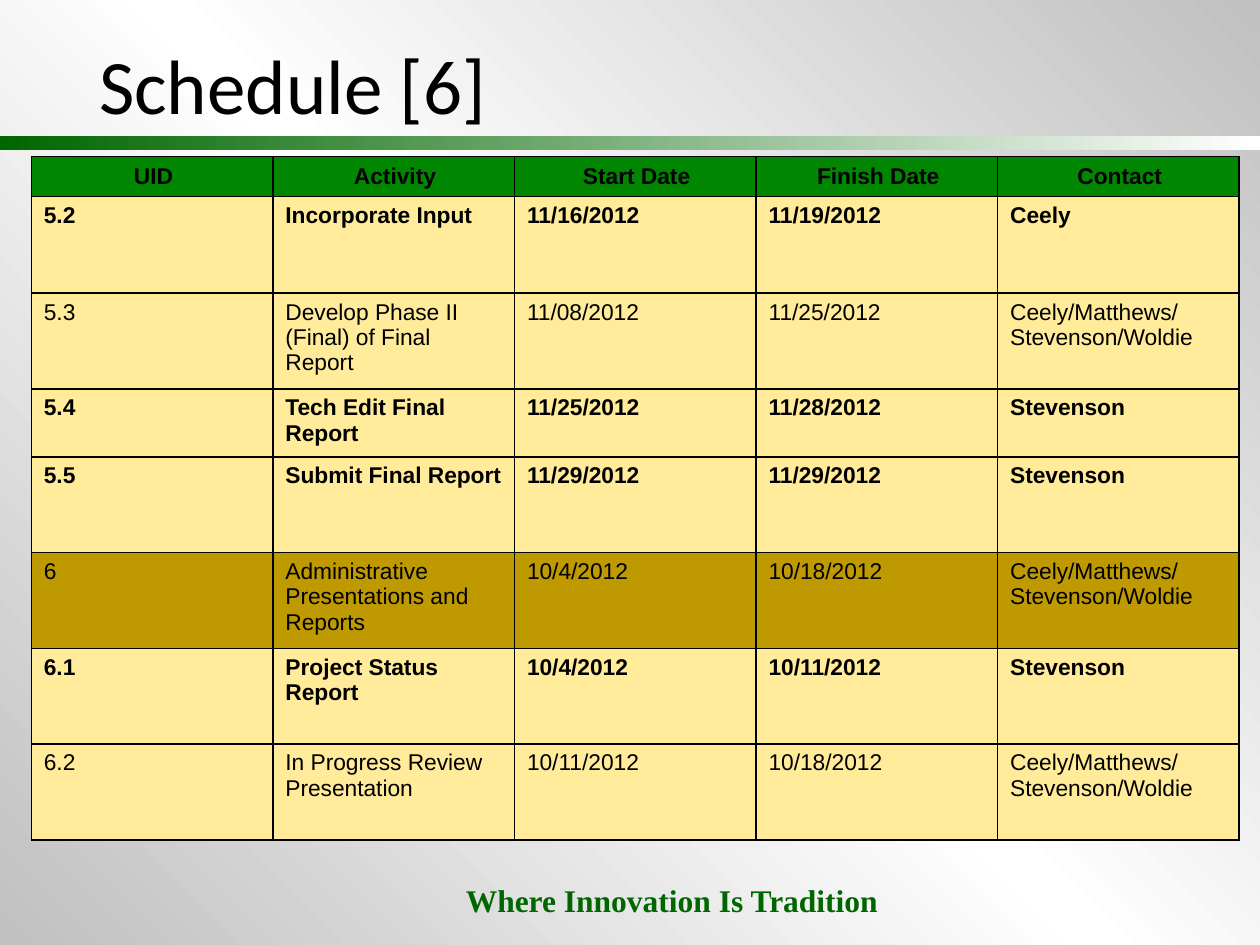
from copy import deepcopy

from lxml import etree
from pptx import Presentation
from pptx.dml.color import RGBColor
from pptx.enum.shapes import MSO_SHAPE
from pptx.enum.text import MSO_ANCHOR, PP_ALIGN
from pptx.oxml.ns import qn
from pptx.util import Cm, Pt

RECTANGLE = MSO_SHAPE.RECTANGLE
MIDDLE, TOP = MSO_ANCHOR.MIDDLE, MSO_ANCHOR.TOP
CENTER, LEFT = PP_ALIGN.CENTER, PP_ALIGN.LEFT

COLORS = {
    "black": "000000", "white": "FFFFFF", "silver": "C0C0C0",
    "green": "006600", "header": "008600", "task": "FFEB99", "phase": "BF9900",
}

# Content
TITLE = "Schedule [6]"
MOTTO = "Where Innovation Is Tradition"
HEADINGS = ["UID", "Activity", "Start Date", "Finish Date", "Contact"]
TEAM = "Ceely/Matthews/Stevenson/Woldie"
# Row height in cm, fill, bold, cell texts
ROWS = [
    (0.81, "header", True, HEADINGS),
    (1.95, "task", True, ["5.2", "Incorporate Input", "11/16/2012", "11/19/2012", "Ceely"]),
    (1.93, "task", False, ["5.3", "Develop Phase II (Final) of Final Report",
                           "11/08/2012", "11/25/2012", "Ceely/Matthews/\nStevenson/Woldie"]),
    (1.37, "task", True, ["5.4", "Tech Edit Final Report", "11/25/2012", "11/28/2012", "Stevenson"]),
    (1.93, "task", True, ["5.5", "Submit Final Report", "11/29/2012", "11/29/2012", "Stevenson"]),
    (1.93, "phase", False, ["6", "Administrative Presentations and Reports",
                            "10/4/2012", "10/18/2012", TEAM]),
    (1.93, "task", True, ["6.1", "Project Status Report", "10/4/2012", "10/11/2012", "Stevenson"]),
    (1.93, "task", False, ["6.2", "In Progress Review Presentation",
                           "10/11/2012", "10/18/2012", TEAM]),
]
COLUMN_WIDTH = 4.87


def rgb(name):
    return RGBColor.from_string(COLORS[name])


def set_font(paragraph, name, size, color, bold=False):
    font = paragraph.font
    font.name, font.size, font.bold = name, Pt(size), bold
    font.color.rgb = rgb(color)


def fill_gradient(fill, angle, first, last):
    fill.gradient()
    fill.gradient_angle = angle
    for stop, color, position in zip(fill.gradient_stops, (first, last), (0, 1)):
        stop.color.rgb = rgb(color)
        stop.position = position


def add_text(slide, box, text, name, size, color, bold=False, anchor=TOP):
    shape = slide.shapes.add_textbox(*map(Cm, box))
    frame = shape.text_frame
    frame.word_wrap = True
    frame.vertical_anchor = anchor
    frame.text = text
    set_font(frame.paragraphs[0], name, size, color, bold)


def add_borders(cell):
    properties = cell._tc.get_or_add_tcPr()
    for index, side in enumerate(("a:lnL", "a:lnR", "a:lnT", "a:lnB")):
        line = etree.Element(qn(side), w=str(Pt(1)))
        solid = etree.SubElement(line, qn("a:solidFill"))
        etree.SubElement(solid, qn("a:srgbClr"), val=COLORS["black"])
        properties.insert(index, line)


presentation = Presentation()
presentation.slide_width, presentation.slide_height = Cm(25.4), Cm(19.05)
slide = presentation.slides.add_slide(presentation.slide_layouts[6])

# Background: silver corners with a white diagonal between them
fill_gradient(slide.background.fill, 45, "silver", "silver")
stops = slide.element.find(".//" + qn("a:gsLst"))
middle_stop = deepcopy(stops[0])
middle_stop.set("pos", "50000")
middle_stop[0].set("val", COLORS["white"])
stops.insert(1, middle_stop)

# Band under the title
band = slide.shapes.add_shape(RECTANGLE, 0, Cm(2.75), Cm(25.4), Cm(0.28))
band.shadow.inherit = False
band.line.fill.background()
fill_gradient(band.fill, 0, "green", "white")

# Motto
add_text(slide, (9.14, 17.63, 8.89, 1.02), MOTTO, "Times New Roman", 18, "green", bold=True)

# Schedule table
table = slide.shapes.add_table(
    len(ROWS), len(HEADINGS), Cm(0.63), Cm(3.15),
    Cm(COLUMN_WIDTH * len(HEADINGS)), Cm(sum(row[0] for row in ROWS))).table
for column in table.columns:
    column.width = Cm(COLUMN_WIDTH)
for row, (height, fill, bold, texts) in zip(table.rows, ROWS):
    row.height = Cm(height)
    is_header = fill == "header"
    for cell, text in zip(row.cells, texts):
        cell.text = text
        cell.margin_right = Cm(0.2)
        cell.vertical_anchor = MIDDLE if is_header else TOP
        cell.fill.solid()
        cell.fill.fore_color.rgb = rgb(fill)
        add_borders(cell)
        for paragraph in cell.text_frame.paragraphs:
            paragraph.alignment = CENTER if is_header else LEFT
            set_font(paragraph, "Arial", 13, "black", bold)

# Title
add_text(slide, (1.75, 0.23, 22.66, 2.9), TITLE, "Calibri", 44, "black", anchor=MIDDLE)

presentation.save("out.pptx")
